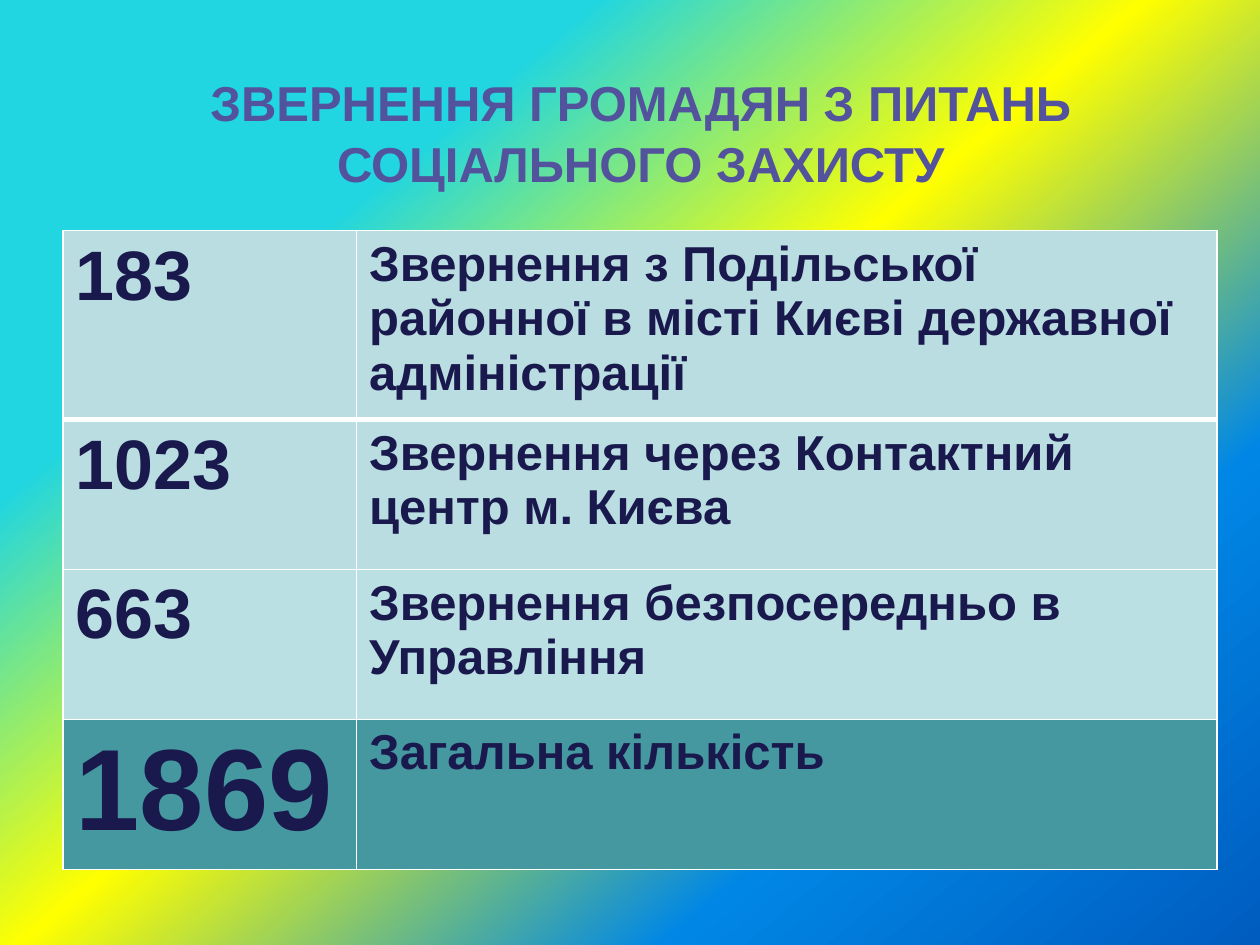
from dataclasses import dataclass

from lxml import etree
from pptx import Presentation
from pptx import util as u
from pptx.dml.color import RGBColor
from pptx.enum import text
from pptx.oxml import ns

INK, WHITE = "19194D", "FFFFFF"


@dataclass
class Row:
    count: str
    label: str
    fill: str
    size: int = 40
    high: float = 1.19
    rule: float = 1


ROWS = [
    Row("183", "Звернення з Подільської районної в місті Києві державної адміністрації",
        "BADDE1", high=1.5, rule=3),
    Row("1023", "Звернення через Контактний центр м. Києва", "BADDE1"),
    Row("663", "Звернення безпосередньо в Управління", "BBE0E3"),
    Row("1869", "Загальна кількість", "4597A0", size=66),
]
STOPS = [(25, "21D6E0"), (48, "FFFF00"), (75, "0087E6"), (100, "005CBF")]


def rgb(code: str) -> RGBColor:
    return RGBColor.from_string(code)


def add(parent, tag: str, **attrs):
    return etree.SubElement(parent, ns.qn(tag), **attrs)


def style(par, size: float, color: str) -> None:
    font = par.font
    font.name, font.size, font.bold = "Arial", u.Pt(size), True
    font.color.rgb = rgb(color)


def paint_back(slide) -> None:
    fill = slide.background.fill
    fill.gradient()
    fill.gradient_angle = 310  # counter-clockwise, so 50 degrees clockwise
    stops = slide.element.find(".//" + ns.qn("a:gsLst"))
    for old in list(stops):
        stops.remove(old)
    for pos, color in STOPS:
        stop = add(stops, "a:gs", pos=str(pos * 1000))
        add(stop, "a:srgbClr", val=color)


def edge(cell, side: str, width: float) -> None:
    line = add(cell._tc.get_or_add_tcPr(), "a:" + side, w=str(u.Pt(width)))
    add(add(line, "a:solidFill"), "a:srgbClr", val=WHITE)


def fill_cell(cell, words: str, size: int, row: Row, above: float) -> None:
    cell.text = words
    style(cell.text_frame.paragraphs[0], size, INK)
    for side, width in (("lnL", 1), ("lnR", 1), ("lnT", above), ("lnB", row.rule)):
        edge(cell, side, width)
    cell.fill.solid()
    cell.fill.fore_color.rgb = rgb(row.fill)


def main() -> None:
    deck = Presentation()
    deck.slide_width, deck.slide_height = u.Inches(10), u.Inches(7.5)
    slide = deck.slides.add_slide(deck.slide_layouts[5])
    paint_back(slide)

    # Title
    title = slide.shapes.title
    title.left, title.top = u.Inches(0.67), u.Inches(0.5)
    title.width, title.height = u.Inches(8.83), u.Inches(1.04)
    frame = title.text_frame
    frame.text = "ЗВЕРНЕННЯ ГРОМАДЯН З ПИТАНЬ СОЦІАЛЬНОГО ЗАХИСТУ"
    frame.word_wrap = True
    frame.auto_size = text.MSO_AUTO_SIZE.NONE
    frame.vertical_anchor = text.MSO_ANCHOR.TOP
    head = frame.paragraphs[0]
    head.alignment = text.PP_ALIGN.CENTER
    head.line_spacing = 1.05
    style(head, 28, "52529D")

    # Table of appeals
    table = slide.shapes.add_table(
        len(ROWS), 2, u.Inches(0.5), u.Inches(1.83), u.Inches(9.17), u.Inches(5.07)).table
    for col, width in zip(table.columns, (2.33, 6.83)):
        col.width = u.Inches(width)
    above = 1
    for i, row in enumerate(ROWS):
        table.rows[i].height = u.Inches(row.high)
        fill_cell(table.cell(i, 0), row.count, row.size, row, above)
        fill_cell(table.cell(i, 1), row.label, 28, row, above)
        above = row.rule

    deck.save("out.pptx")


if __name__ == "__main__":
    main()
